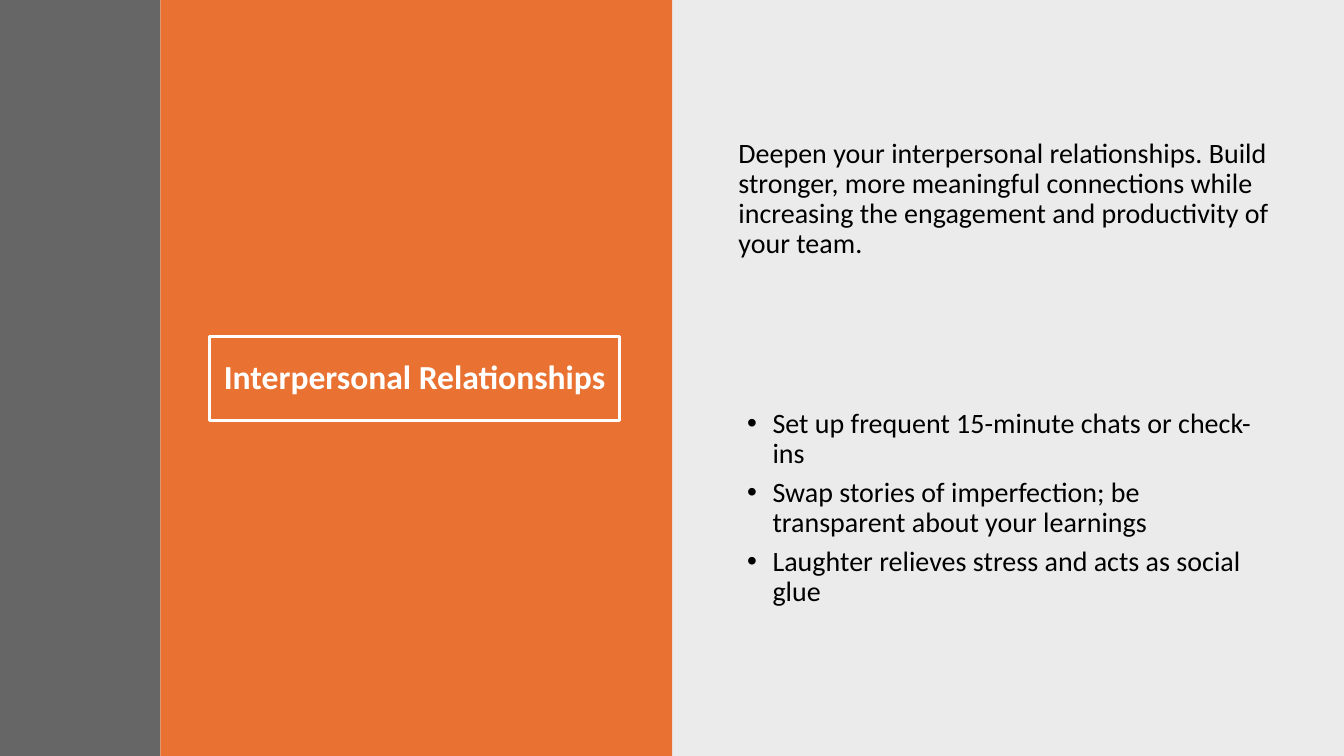
from lxml.etree import SubElement
from pptx import Presentation
from pptx.dml.color import RGBColor
from pptx.enum.shapes import MSO_SHAPE
from pptx.enum.text import MSO_ANCHOR, PP_ALIGN
from pptx.oxml.ns import qn
from pptx.util import Cm, Pt

COLORS = {
    "black": "000000",
    "white": "FFFFFF",
    "orange": "E97132",
    "gray": "404040",
}
WIDTH, HEIGHT = 33.87, 19.05
STRIPE_RIGHT = 4.04
MIDDLE = 16.94


def add_panel(left, right, color, opacity):
    panel = slide.shapes.add_shape(
        MSO_SHAPE.RECTANGLE, Cm(left), Cm(0), Cm(right - left), Cm(HEIGHT))
    panel.shadow.inherit = False
    panel.line.fill.background()
    panel.fill.solid()
    panel.fill.fore_color.rgb = RGBColor.from_string(COLORS[color])
    if opacity < 100:
        srgb = panel._element.spPr.find(qn("a:solidFill")).find(qn("a:srgbClr"))
        SubElement(srgb, qn("a:alpha")).set("val", str(opacity * 1000))


def add_text(left, top, width, height, lines, size, color):
    box = slide.shapes.add_textbox(Cm(left), Cm(top), Cm(width), Cm(height))
    box.text_frame.word_wrap = True
    box.text_frame.text = "\n".join(lines)
    for paragraph in box.text_frame.paragraphs:
        paragraph.line_spacing = 0.9
        font = paragraph.runs[0].font
        font.name = "Calibri"
        font.size = Pt(size)
        font.color.rgb = RGBColor.from_string(COLORS[color])
    return box


prs = Presentation()
prs.slide_width, prs.slide_height = Cm(WIDTH), Cm(HEIGHT)
slide = prs.slides.add_slide(prs.slide_layouts[6])

add_panel(MIDDLE, WIDTH, "black", 8)
add_panel(STRIPE_RIGHT, MIDDLE, "orange", 100)

title = add_text(5.28, 8.48, 10.34, 2.11, ["Interpersonal Relationships"], 24, "white")
title.line.color.rgb = RGBColor.from_string(COLORS["white"])
title.line.width = Pt(2)
title.text_frame.vertical_anchor = MSO_ANCHOR.MIDDLE
heading = title.text_frame.paragraphs[0]
heading.alignment = PP_ALIGN.CENTER
heading.runs[0].font.bold = True

add_panel(0, STRIPE_RIGHT, "gray", 80)

intro = add_text(18.36, 3.38, 14.05, 3.84, [
    "Deepen your interpersonal relationships. Build stronger, more meaningful "
    "connections while increasing the engagement and productivity of your team.",
], 20, "black")
intro.text_frame.paragraphs[0].space_before = Pt(10)

tips = add_text(18.26, 10.19, 14.05, 7.09, [
    "Set up frequent 15-minute chats or check-ins",
    "Swap stories of imperfection; be transparent about your learnings",
    "Laughter relieves stress and acts as social glue",
], 20, "black")
for tip in tips.text_frame.paragraphs:
    tip.space_after = Pt(6)
    properties = tip._p.get_or_add_pPr()
    properties.set("marL", str(Cm(0.96)))
    properties.set("indent", str(Cm(-0.64)))
    SubElement(properties, qn("a:buFont")).set("typeface", "Arial")
    SubElement(properties, qn("a:buChar")).set("char", "•")

prs.save("out.pptx")
